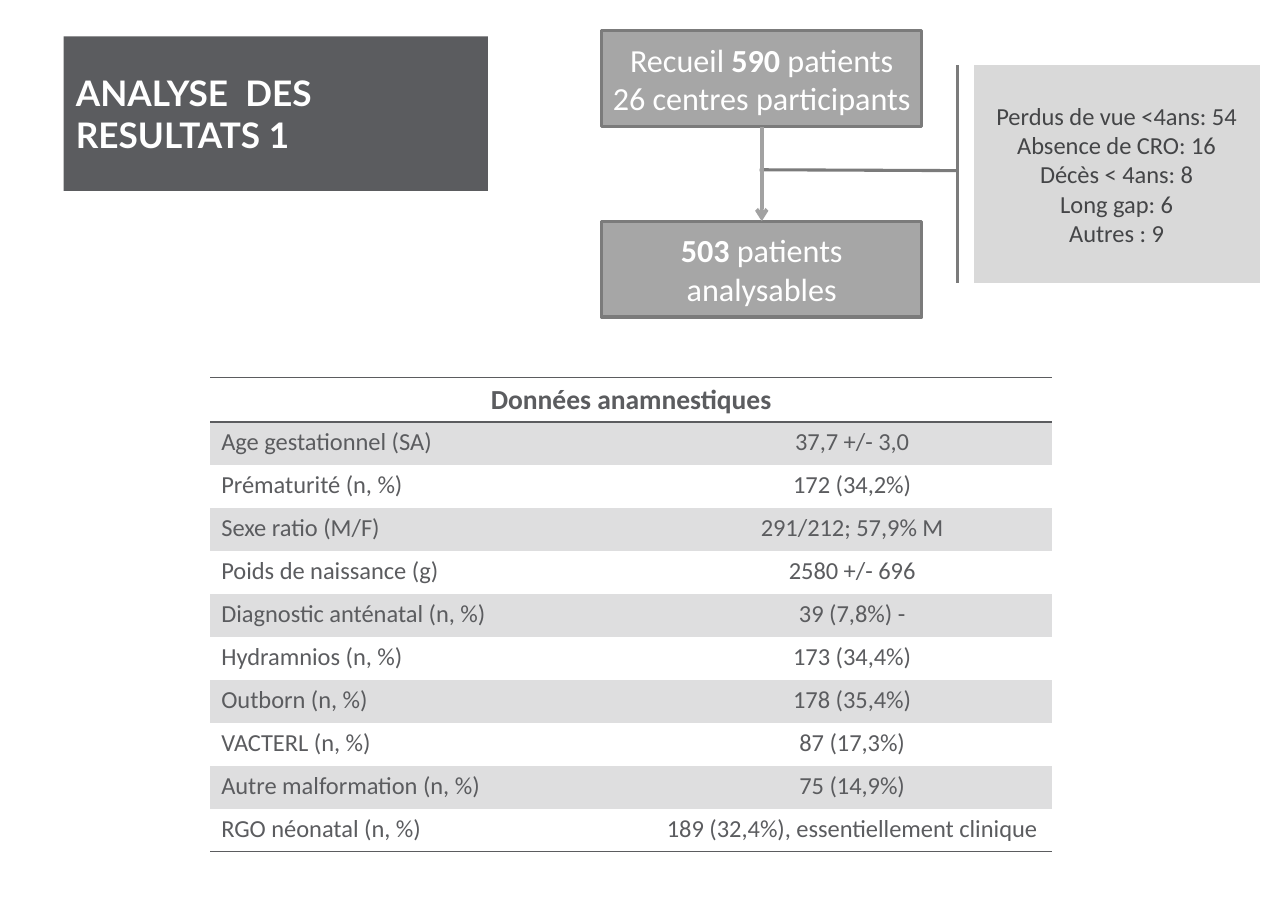
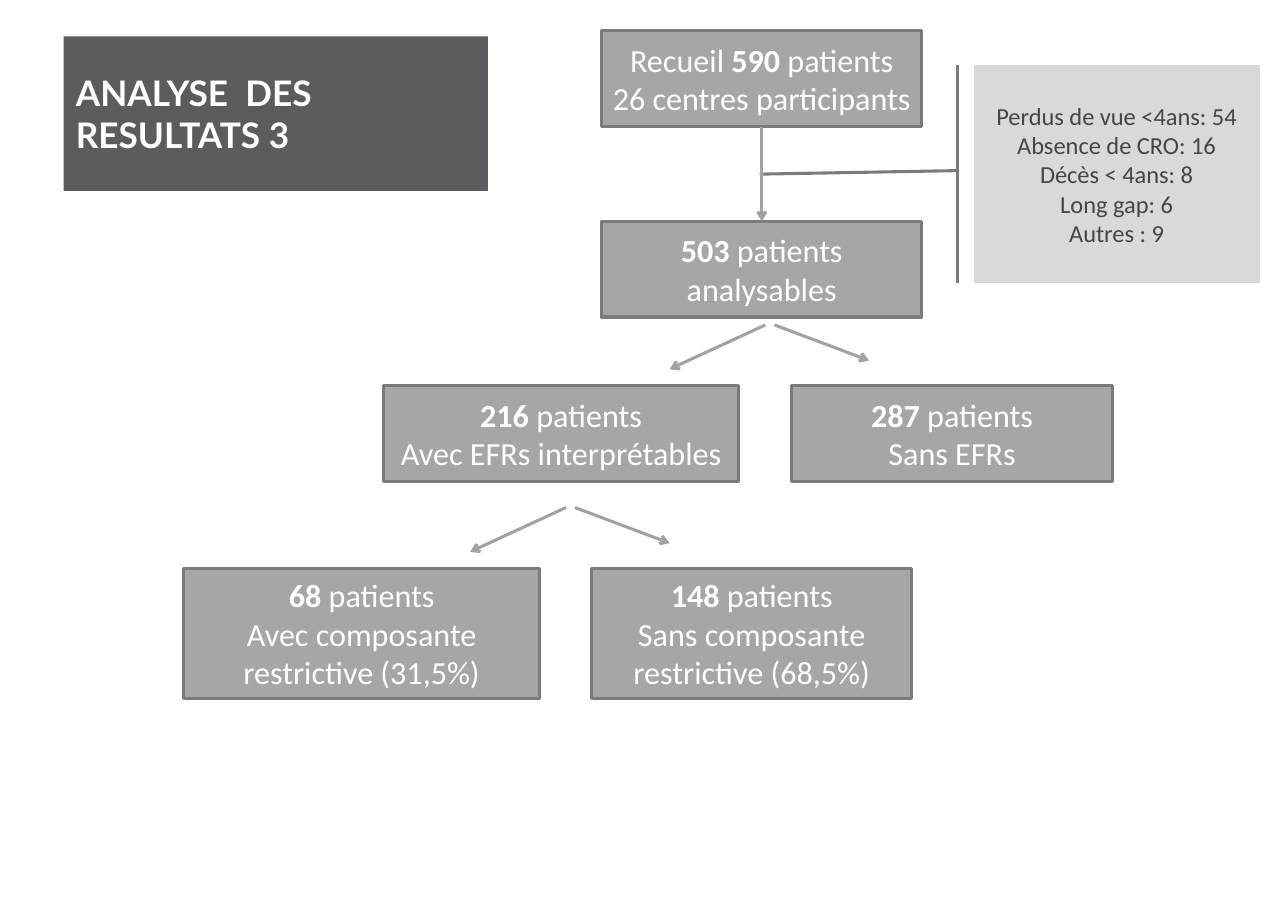
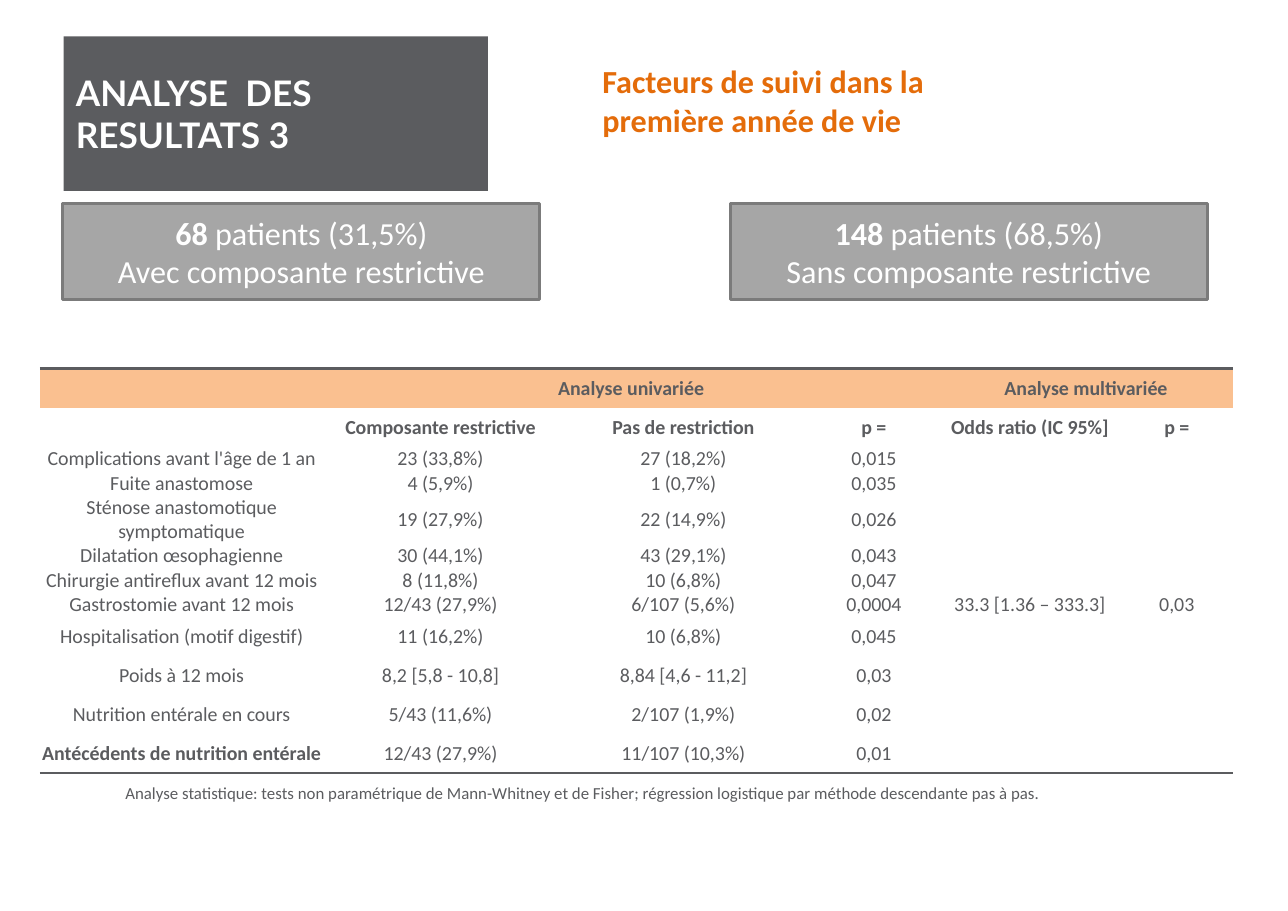
import pptx
import pptx.util
import pptx.dml.color
import pptx.enum.shapes
import pptx.enum.text
import pptx.oxml.ns
from lxml import etree

Cm, Pt = pptx.util.Cm, pptx.util.Pt
RGB = pptx.dml.color.RGBColor.from_string
SHAPE = pptx.enum.shapes.MSO_SHAPE
STRAIGHT = pptx.enum.shapes.MSO_CONNECTOR.STRAIGHT
LEFT, CENTER = pptx.enum.text.PP_ALIGN.LEFT, pptx.enum.text.PP_ALIGN.CENTER
MIDDLE, TOP = pptx.enum.text.MSO_ANCHOR.MIDDLE, pptx.enum.text.MSO_ANCHOR.TOP
qn = pptx.oxml.ns.qn

COLORS = {
    "white": "FFFFFF", "dark": "5B5C5F", "box": "A6A6A6", "outline": "7B7B7B",
    "arrow": "A2A2A2", "callout": "D9D9D9", "callout_text": "444547",
    "stripe": "DEDEDF", "peach": "FAC090", "orange": "E46C0A",
}
NO_GRID_STYLE = "{2D5ABB26-0587-4C30-8999-92F81FD0307C}"
BOX_WIDTH, BOX_HEIGHT = 7.39, 2.21
MAIN_LEFT = 13.87


def write_text(text_frame, lines, size, color, align=CENTER, font="Calibri", anchor=MIDDLE):
    """Write one paragraph per line; parts between asterisks are bold."""
    text_frame.word_wrap = True
    text_frame.vertical_anchor = anchor
    for index, line in enumerate(lines):
        paragraph = text_frame.paragraphs[0] if index == 0 else text_frame.add_paragraph()
        paragraph.alignment = align
        for position, part in enumerate(line.split("*")):
            if part:
                run = paragraph.add_run()
                run.text = part
                run.font.name = font
                run.font.size = Pt(size)
                run.font.bold = position % 2 == 1
                run.font.color.rgb = RGB(COLORS[color])


def style_cell(cell, text, size, fill, align=CENTER, anchor=MIDDLE, borders="", border_width=1):
    """Fill a cell, write its text and draw the borders named by T and B."""
    if fill:
        cell.fill.solid()
        cell.fill.fore_color.rgb = RGB(COLORS[fill])
    else:
        cell.fill.background()
    cell.vertical_anchor = anchor
    if text:
        write_text(cell.text_frame, [text], size, "dark", align, anchor=anchor)
    else:
        end = etree.SubElement(cell.text_frame.paragraphs[0]._p, qn("a:endParaRPr"))
        end.set("sz", str(size * 100))
    properties = cell._tc.get_or_add_tcPr()
    for side in sorted(borders):
        border = etree.Element(qn("a:ln" + side), w=str(Pt(border_width)))
        solid = etree.SubElement(border, qn("a:solidFill"))
        etree.SubElement(solid, qn("a:srgbClr"), val=COLORS["dark"])
        properties.insert(0, border)


presentation = pptx.Presentation()
presentation.slide_width, presentation.slide_height = Cm(29.7), Cm(21)

# Slides with their title bands
slides = []
for number in (1, 3, 3):
    slide = presentation.slides.add_slide(presentation.slide_layouts[6])
    slides.append(slide)
    title = slide.shapes.add_shape(SHAPE.RECTANGLE, Cm(1.47), Cm(0.84), Cm(9.78), Cm(3.56))
    title.shadow.inherit = False
    title.fill.solid()
    title.fill.fore_color.rgb = RGB(COLORS["dark"])
    title.line.fill.background()
    title.text_frame.margin_left = title.text_frame.margin_right = Cm(0.28)
    write_text(title.text_frame, [f"*ANALYSE  DES RESULTATS {number}*"], 23, "white", LEFT, "Lato")
anamnesis_slide, flow_slide, factors_slide = slides

# Patient boxes: slide, left, top, width, height, lines
boxes = []
for slide in (anamnesis_slide, flow_slide):
    boxes += [
        (slide, MAIN_LEFT, 0.71, BOX_WIDTH, BOX_HEIGHT,
         ["Recueil *590* patients", "26 centres participants"]),
        (slide, MAIN_LEFT, 5.1, BOX_WIDTH, BOX_HEIGHT, ["*503* patients", "analysables"]),
    ]
boxes += [
    (flow_slide, 8.84, 8.89, 8.2, BOX_HEIGHT, ["*216* patients", "Avec EFRs interprétables"]),
    (flow_slide, 18.26, 8.89, BOX_WIDTH, BOX_HEIGHT, ["*287* patients", "Sans EFRs"]),
    (flow_slide, 4.24, 13.1, 8.2, 3, ["*68* patients", "Avec composante restrictive (31,5%)"]),
    (flow_slide, 13.64, 13.1, BOX_WIDTH, 3, ["*148* patients", "Sans composante restrictive (68,5%)"]),
    (factors_slide, 1.45, 4.7, 11, BOX_HEIGHT,
     ["*68* patients (31,5%)", "Avec composante restrictive"]),
    (factors_slide, 16.84, 4.7, 11, BOX_HEIGHT,
     ["*148* patients (68,5%)", "Sans composante restrictive"]),
]
box_shapes = []
for slide, left, top, width, height, lines in boxes:
    box = slide.shapes.add_shape(SHAPE.RECTANGLE, Cm(left), Cm(top), Cm(width), Cm(height))
    box.shadow.inherit = False
    box.fill.solid()
    box.fill.fore_color.rgb = RGB(COLORS["box"])
    box.line.color.rgb = RGB(COLORS["outline"])
    box.line.width = Pt(2)
    box.text_frame.margin_left = box.text_frame.margin_right = Cm(0.2)
    write_text(box.text_frame, lines, 21, "white")
    box_shapes.append(box)

# Callouts listing the excluded patients
for slide, leader_end in ((anamnesis_slide, 0.48), (flow_slide, 0.5)):
    callout = slide.shapes.add_shape(
        SHAPE.LINE_CALLOUT_1_ACCENT_BAR, Cm(22.45), Cm(1.5), Cm(6.6), Cm(5.03))
    for index, value in enumerate((0.484, -0.055, leader_end, -0.747)):
        callout.adjustments[index] = value
    callout.shadow.inherit = False
    callout.fill.solid()
    callout.fill.fore_color.rgb = RGB(COLORS["callout"])
    callout.line.color.rgb = RGB(COLORS["outline"])
    callout.line.width = Pt(2)
    write_text(callout.text_frame, [
        "Perdus de vue <4ans: 54", "Absence de CRO: 16", "Décès < 4ans: 8",
        "Long gap: 6", "Autres : 9"], 16, "callout_text")

# Arrows: slide, start, end, width, boxes joined
main_x = MAIN_LEFT + BOX_WIDTH / 2
main_start, main_end = (main_x, 0.71 + BOX_HEIGHT), (main_x, 5.1)
arrows = [
    (anamnesis_slide, main_start, main_end, 2.5, box_shapes[0:2]),
    (flow_slide, main_start, main_end, 2, box_shapes[2:4]),
]
for shift_x, shift_y in ((0, 0), (-4.6, 4.21)):
    for start_x, end_x, end_y in ((17.65, 15.44, 8.51), (17.86, 20.04, 8.31)):
        arrows.append((flow_slide, (start_x + shift_x, 7.49 + shift_y),
                       (end_x + shift_x, end_y + shift_y), 2, None))
for slide, start, end, width, joined in arrows:
    arrow = slide.shapes.add_connector(STRAIGHT, *(Cm(value) for value in start + end))
    if joined:
        arrow.begin_connect(joined[0], 2)
        arrow.end_connect(joined[1], 0)
    arrow.line.color.rgb = RGB(COLORS["arrow"])
    arrow.line.width = Pt(width)
    etree.SubElement(arrow.line._get_or_add_ln(), qn("a:tailEnd"), type="arrow")
    etree.SubElement(arrow._element.spPr, qn("a:effectLst"))

# Table contents
anamnesis_rows = [
    ("*Données anamnestiques*", ""),
    ("Age gestationnel (SA)", "37,7 +/- 3,0"),
    ("Prématurité (n, %)", "172 (34,2%)"),
    ("Sexe ratio (M/F)", "291/212; 57,9% M"),
    ("Poids de naissance (g)", "2580 +/- 696"),
    ("Diagnostic anténatal (n, %)", "39 (7,8%) -"),
    ("Hydramnios (n, %)", "173 (34,4%)"),
    ("Outborn (n, %)", "178 (35,4%)"),
    ("VACTERL (n, %)", "87 (17,3%)"),
    ("Autre malformation (n, %)", "75 (14,9%)"),
    ("RGO néonatal (n, %)", "189 (32,4%), essentiellement clinique"),
]
factor_rows = [
    ("", "*Analyse univariée*", "", "", "*Analyse multivariée*", ""),
    ("", "*Composante restrictive*", "*Pas de restriction*", "*p =*", "*Odds ratio (IC 95%]*", "*p =*"),
    ("Complications avant l'âge de 1 an", "23 (33,8%)", "27 (18,2%)", "0,015", "", ""),
    ("Fuite anastomose", "4 (5,9%)", "1 (0,7%)", "0,035", "", ""),
    ("Sténose anastomotique symptomatique", "19 (27,9%)", "22 (14,9%)", "0,026", "", ""),
    ("Dilatation œsophagienne", "30 (44,1%)", "43 (29,1%)", "0,043", "", ""),
    ("Chirurgie antireflux avant 12 mois", "8 (11,8%)", "10 (6,8%)", "0,047", "", ""),
    ("Gastrostomie avant 12 mois", "12/43 (27,9%)", "6/107 (5,6%)", "0,0004", "33.3 [1.36 – 333.3]", "0,03"),
    ("Hospitalisation (motif digestif)", "11 (16,2%)", "10 (6,8%)", "0,045", "", ""),
    ("Poids à 12 mois", "8,2 [5,8 - 10,8]", "8,84 [4,6 - 11,2]", "0,03", "", ""),
    ("Nutrition entérale en cours", "5/43 (11,6%)", "2/107 (1,9%)", "0,02", "", ""),
    ("*Antécédents de nutrition entérale*", "12/43 (27,9%)", "11/107 (10,3%)", "0,01", "", ""),
]

# Empty tables: slide, left, top, column widths, row heights
tables = []
for slide, left, top, widths, heights in (
    (anamnesis_slide, 4.85, 8.7, [10.19, 9.22], [1.03] + [0.99] * 10),
    (factors_slide, 0.92, 8.5, [6.53, 5.41, 5.79, 3, 4.19, 2.59],
     [0.9] * 2 + [0.56] * 2 + [1.12] + [0.56] * 3 + [0.9] * 4),
):
    table = slide.shapes.add_table(len(heights), len(widths), Cm(left), Cm(top),
                                   Cm(sum(widths)), Cm(sum(heights))).table
    table.first_row = table.horz_banding = False
    table._tbl.tblPr.find(qn("a:tableStyleId")).text = NO_GRID_STYLE
    for column, width in zip(table.columns, widths):
        column.width = Cm(width)
    for row, height in zip(table.rows, heights):
        row.height = Cm(height)
    tables.append(table)
anamnesis_table, factors_table = tables

# Anamnesis table: striped rows under a merged heading
anamnesis_table.cell(0, 0).merge(anamnesis_table.cell(0, 1))
for row_index, row in enumerate(anamnesis_rows):
    heading = row_index == 0
    borders = "TB" if heading else "B" if row_index == len(anamnesis_rows) - 1 else ""
    for column_index, text in enumerate(row):
        style_cell(anamnesis_table.cell(row_index, column_index), text, 18 if heading else 16,
                   "stripe" if row_index % 2 else None,
                   CENTER if heading or column_index else LEFT, TOP, borders)

# Factors table: two merged headings
factors_table.cell(0, 1).merge(factors_table.cell(0, 3))
factors_table.cell(0, 4).merge(factors_table.cell(0, 5))
for row_index, row in enumerate(factor_rows):
    borders = {0: "T", len(factor_rows) - 1: "B"}.get(row_index, "")
    for column_index, text in enumerate(row):
        cell = factors_table.cell(row_index, column_index)
        cell.margin_left = cell.margin_right = cell.margin_top = cell.margin_bottom = 0
        style_cell(cell, text, 13, "white" if row_index else "peach",
                   borders=borders, border_width=2)

# Subtitle and note of the factors slide
for left, top, width, height, text, size, color in (
    (13.64, 1.3, 9.4, 2.06, "*Facteurs de suivi dans la première année de vie*", 21, "orange"),
    (2.64, 17.91, 25.6, 0.74,
     "Analyse statistique: tests non paramétrique de Mann-Whitney et de Fisher; "
     "régression logistique par méthode descendante pas à pas.", 11, "dark"),
):
    text_box = factors_slide.shapes.add_textbox(Cm(left), Cm(top), Cm(width), Cm(height))
    write_text(text_box.text_frame, [text], size, color, LEFT, anchor=TOP)

presentation.save("out.pptx")
